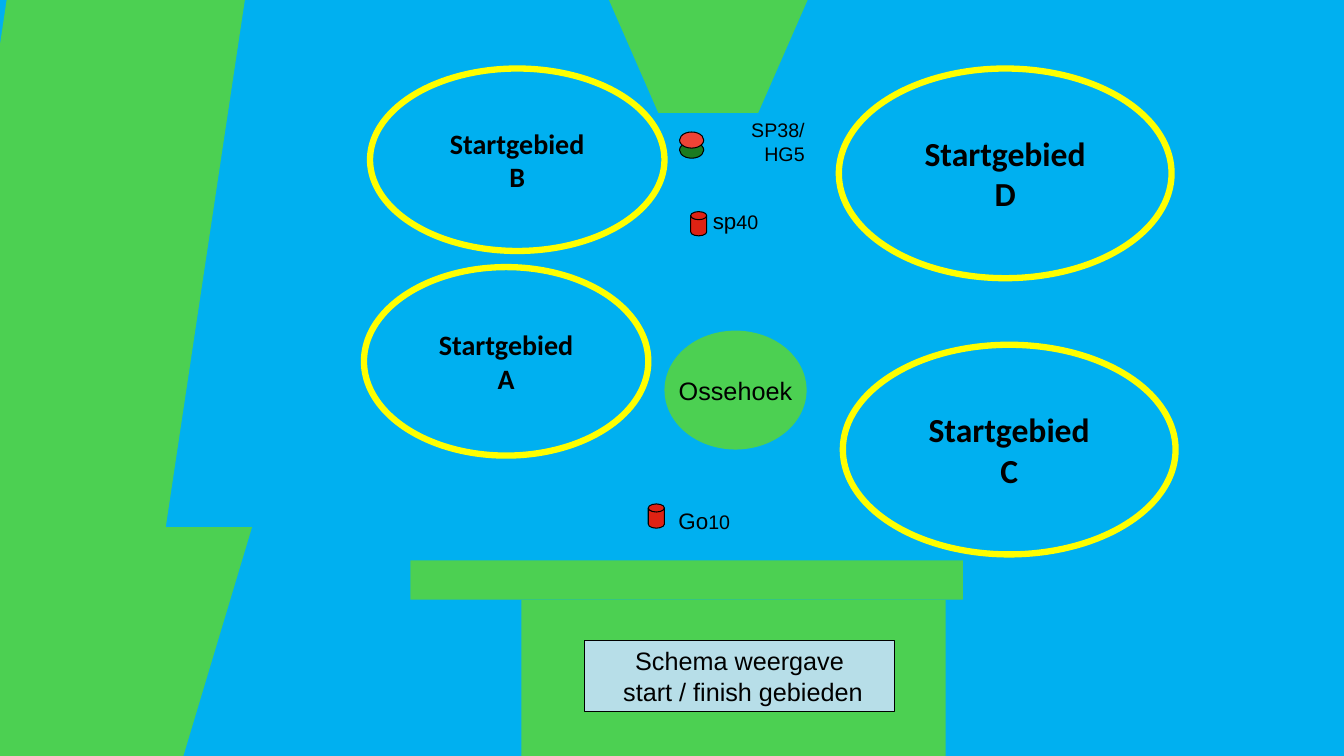
from dataclasses import dataclass

from pptx import Presentation
from pptx.dml.color import RGBColor
from pptx.enum.shapes import MSO_SHAPE as Shape
from pptx.enum.text import MSO_ANCHOR as Anchor, PP_ALIGN as Align
from pptx.util import Pt

PX = 9144  # EMU per px, 100 px to the inch


@dataclass(frozen=True)
class Theme:
    water: str = "00B0F0"
    land: str = "4CD052"
    buoy: str = "DF2213"
    buoy_top: str = "EE4336"
    buoy_base: str = "1B7B20"
    caption: str = "B7DEE8"
    ring: str = "FFFF00"
    ink: str = "000000"
    label_font: str = "Arial"
    area_font: str = "Calibri"
    small: int = 14
    medium: int = 16
    large: int = 18
    thin: float = 0.75
    thick: float = 4.5


theme = Theme()


def paint(shape, fill=None, line=None, width=theme.thin):
    shape.shadow.inherit = False
    if fill:
        shape.fill.solid()
        shape.fill.fore_color.rgb = RGBColor.from_string(fill)
    else:
        shape.fill.background()
    if line:
        shape.line.color.rgb = RGBColor.from_string(line)
        shape.line.width = Pt(width)
    else:
        shape.line.fill.background()
    return shape


def write(shape, lines, font=theme.label_font, bold=False, align=Align.CENTER, wrap=False):
    """Fill a shape with lines, each a list of (text, size) spans."""
    frame = shape.text_frame
    frame.word_wrap = wrap
    frame.vertical_anchor = Anchor.MIDDLE
    for index, spans in enumerate(lines):
        para = frame.add_paragraph() if index else frame.paragraphs[0]
        para.alignment = align
        for text, size in spans:
            span = para.add_run()
            span.text = text
            span.font.name = font
            span.font.size = Pt(size)
            span.font.bold = bold
            span.font.color.rgb = RGBColor.from_string(theme.ink)


deck = Presentation()
deck.slide_width, deck.slide_height = 1333 * PX, 750 * PX
page = deck.slides.add_slide(deck.slide_layouts[6])
page.background.fill.solid()
page.background.fill.fore_color.rgb = RGBColor.from_string(theme.water)
shapes = page.shapes

# Land
banks = [
    (Shape.PARALLELOGRAM, (-72, -1, 315, 525), 0.25),
    (Shape.PARALLELOGRAM, (-80, 523, 330, 233), 0.3),
    (Shape.RECTANGLE, (407, 556, 548, 39), None),
    (Shape.RECTANGLE, (517, 595, 421, 155), None),
]
for kind, place, slant in banks:
    bank = paint(shapes.add_shape(kind, *(n * PX for n in place)), theme.land)
    if slant:
        bank.adjustments[0] = slant

island = shapes.add_shape(Shape.OVAL, *(n * PX for n in (659, 328, 141, 118)))
write(paint(island, theme.land), [[("Ossehoek", theme.large)]])

outline = shapes.build_freeform(604, 0, scale=PX)
outline.add_line_segments([(653, 112), (752, 112), (801, 0)], close=True)
paint(outline.convert_to_shape(), theme.land)

# Buoys
buoys = [
    (Shape.FLOWCHART_MAGNETIC_DISK, (685, 210, 16, 24), theme.buoy),
    (Shape.FLOWCHART_MAGNETIC_DISK, (643, 500, 16, 24), theme.buoy),
    (Shape.OVAL, (674, 141, 24, 16), theme.buoy_base),
    (Shape.OVAL, (674, 131, 24, 16), theme.buoy_top),
]
for kind, place, color in buoys:
    paint(shapes.add_shape(kind, *(n * PX for n in place)), color, theme.ink)

buoy_labels = [
    ((690, 203, 79, 32), [("sp", theme.medium), ("40", theme.small)], Align.CENTER),
    ((659, 500, 79, 32), [("Go", theme.medium), ("10", theme.small)], Align.CENTER),
    ((706, 125, 102, 31), [("SP38/HG5", theme.small)], Align.RIGHT),
]
for place, spans, align in buoy_labels:
    write(shapes.add_textbox(*(n * PX for n in place)), [spans], align=align)

# Caption
caption = shapes.add_shape(Shape.RECTANGLE, *(n * PX for n in (580, 635, 307, 71)))
write(
    paint(caption, theme.caption, theme.ink),
    [[("Schema weergave", theme.large)], [(" start / finish gebieden", theme.large)]],
)

# Starting areas
areas = [
    ("B", (367, 68, 292, 181), 20),
    ("A", (361, 265, 282, 187), 20),
    ("C", (836, 342, 330, 208), 24),
    ("D", (832, 68, 330, 208), 24),
]
for letter, place, size in areas:
    area = shapes.add_shape(Shape.OVAL, *(n * PX for n in place))
    paint(area, line=theme.ring, width=theme.thick)
    write(area, [[("Startgebied", size)], [(letter, size)]],
          font=theme.area_font, bold=True, wrap=True)

deck.save("out.pptx")
